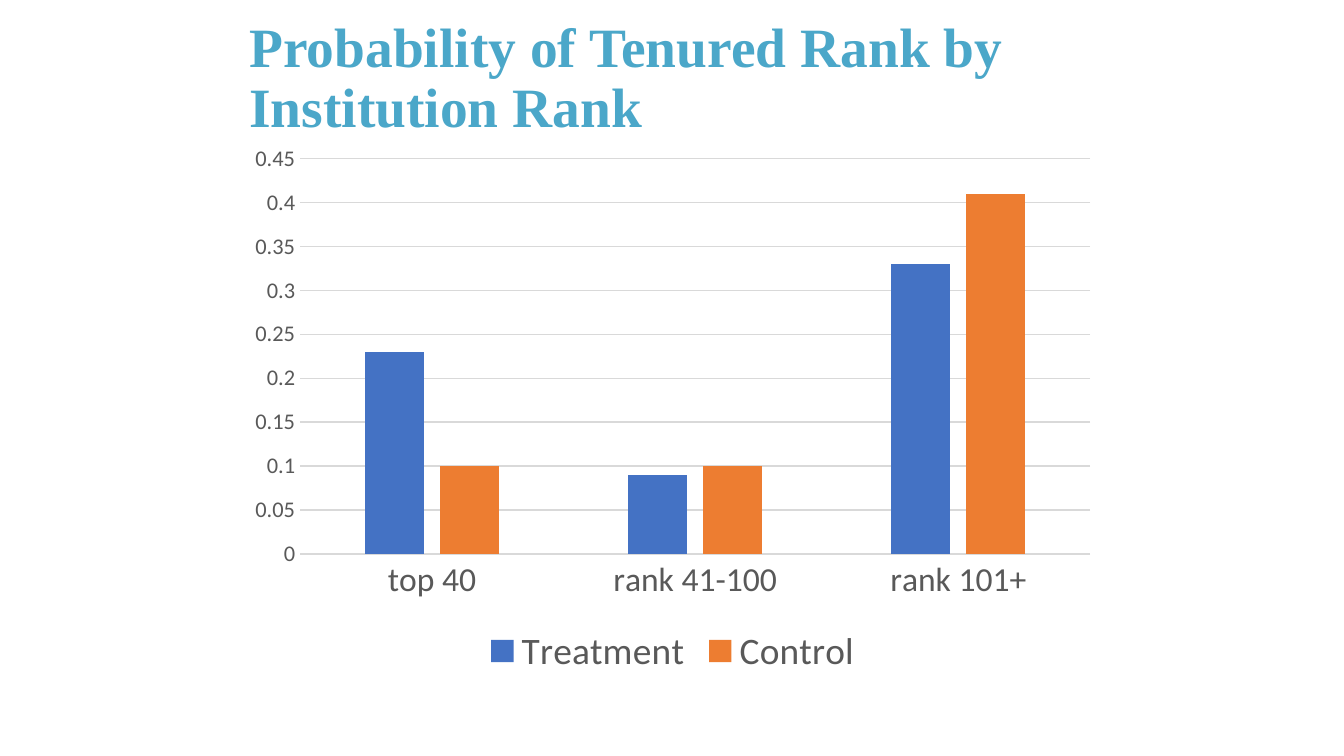
from pptx import Presentation
from pptx import util as u
from pptx.chart import data
from pptx.dml import color
from pptx.enum import chart as kinds
from pptx.enum import text

PX = 9525
GREY = "595959"
RULE = "D9D9D9"
SERIES = [
    ("Treatment", (0.23, 0.09, 0.33), "4472C4"),
    ("Control", (0.1, 0.1, 0.41), "ED7D31"),
]


def px(*lengths):
    """Turn whole pixels into EMU."""
    return [u.Emu(length * PX) for length in lengths]


def rgb(value):
    """Turn a hex string into a colour."""
    return color.RGBColor.from_string(value)


def set_font(font, size, hue, name="Calibri", bold=False):
    """Format a font."""
    font.size, font.name, font.bold = u.Pt(size), name, bold
    font.color.rgb = rgb(hue)


def write(frame, words, align=text.PP_ALIGN.LEFT, spacing=0.9, **font):
    """Write one formatted paragraph into a text frame."""
    para = frame.paragraphs[0]
    para.alignment, para.line_spacing = align, spacing
    span = para.add_run()
    span.text = words
    set_font(span.font, **font)


def add_title(page, box):
    """Place and format the title placeholder."""
    title = page.shapes.title
    title.left, title.top, title.width, title.height = px(*box)
    frame = title.text_frame
    frame.word_wrap = True
    frame.auto_size = text.MSO_AUTO_SIZE.NONE
    frame.vertical_anchor = text.MSO_ANCHOR.MIDDLE
    frame.margin_left, frame.margin_right = px(8, 8)
    write(frame, "Probability of Tenured Rank by Institution Rank",
          size=29.7, hue="4BA7C9", name="Times New Roman", bold=True)


def format_axis(axis, size):
    """Format the labels of an axis and hide its ticks."""
    axis.major_tick_mark = axis.minor_tick_mark = kinds.XL_TICK_MARK.NONE
    set_font(axis.tick_labels.font, size, GREY)


def format_rule(line):
    """Draw a thin pale line."""
    line.color.rgb = rgb(RULE)
    line.width = u.Pt(0.75)


def add_rank_chart(page, box):
    """Place the clustered columns by institution rank."""
    table = data.CategoryChartData(number_format="General")
    table.categories = ["top 40", "rank 41-100", "rank 101+"]
    for name, values, _ in SERIES:
        table.add_series(name, values)
    chart = page.shapes.add_chart(
        kinds.XL_CHART_TYPE.COLUMN_CLUSTERED, *px(*box), table).chart
    set_font(chart.font, 10, "000000")
    chart.has_title = False

    plot = chart.plots[0]
    plot.gap_width, plot.overlap = 219, -27
    plot.vary_by_categories = False
    for series, (_, _, hue) in zip(plot.series, SERIES):
        series.format.fill.solid()
        series.format.fill.fore_color.rgb = rgb(hue)

    format_axis(chart.category_axis, 18)
    format_rule(chart.category_axis.format.line)
    scale = chart.value_axis
    format_axis(scale, 12)
    scale.minimum_scale, scale.maximum_scale, scale.major_unit = 0, 0.45, 0.05
    scale.format.line.fill.background()
    format_rule(scale.major_gridlines.format.line)

    chart.has_legend = True
    chart.legend.position = kinds.XL_LEGEND_POSITION.BOTTOM
    chart.legend.include_in_layout = False
    set_font(chart.legend.font, 20, GREY)


def main():
    """Build the slide and save the deck."""
    deck = Presentation()
    deck.slide_width, deck.slide_height = px(960, 540)
    page = deck.slides.add_slide(deck.slide_layouts.get_by_name("Title Only"))
    add_title(page, (170, 29, 653, 56))
    add_rank_chart(page, (170, 96, 621, 391))
    deck.save("out.pptx")


if __name__ == "__main__":
    main()
